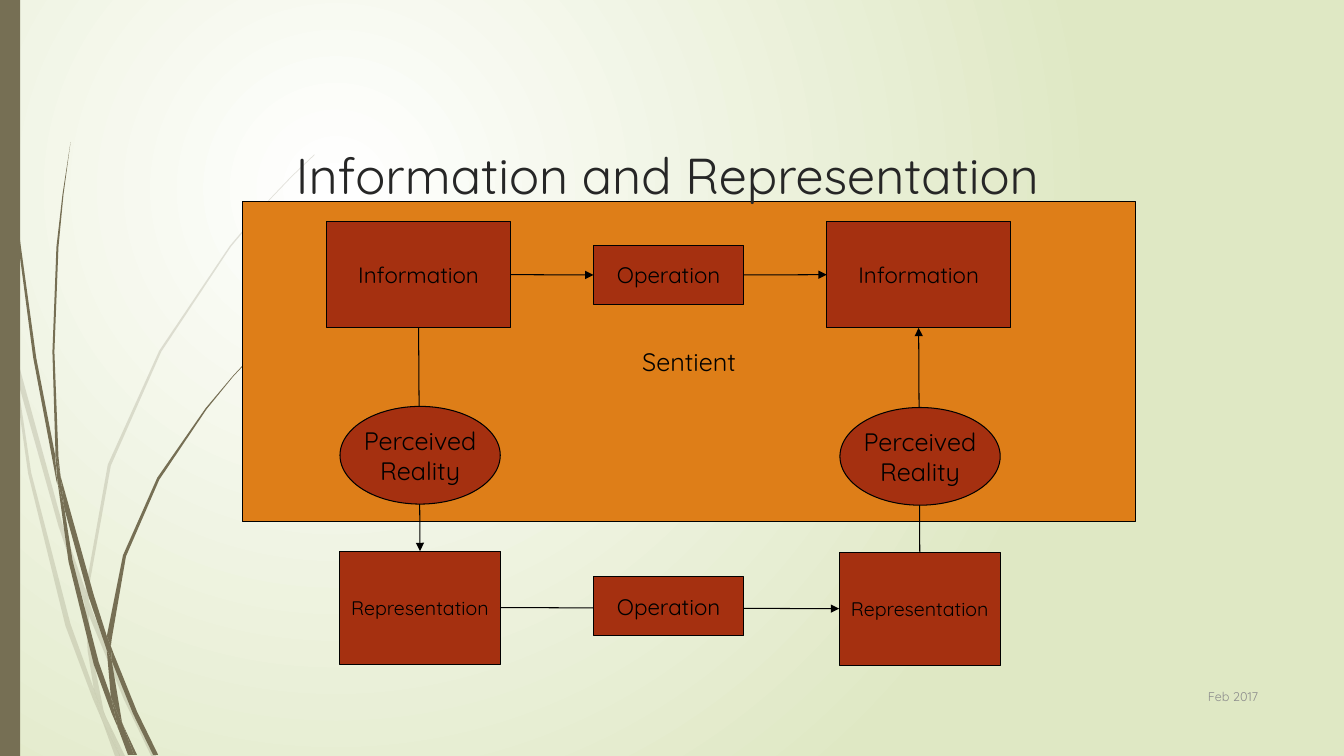
from lxml.etree import SubElement
from pptx import Presentation
from pptx.dml.color import RGBColor
from pptx.enum.shapes import MSO_CONNECTOR, MSO_SHAPE
from pptx.enum.text import MSO_ANCHOR, MSO_AUTO_SIZE, PP_ALIGN
from pptx.oxml.ns import qn
from pptx.util import Pt

COLORS = {"ink": "000000", "title": "262626", "date": "8C8C8C", "stem": "766F54",
          "panel": "DE7E18", "node": "A53010", "glow": "FFFFFF", "field": "DFE8C4"}
FONT = "Quicksand"
TITLE = "Information and Representation"
DATE = "Feb 2017"
SLIDE_W, SLIDE_H = 960, 540

# Kind of node: preset shape, width, height, text size
KINDS = {
    "panel": (MSO_SHAPE.RECTANGLE, 638.4, 228.6, 18),
    "information": (MSO_SHAPE.RECTANGLE, 131.4, 76, 16),
    "representation": (MSO_SHAPE.RECTANGLE, 115.2, 80.7, 14),
    "operation": (MSO_SHAPE.RECTANGLE, 107.3, 42.4, 16),
    "reality": (MSO_SHAPE.OVAL, 114.5, 69.8, 18),
}
# Key: kind, lines of text, centre x, centre y
PANEL = {"sentient": ("panel", ["Sentient"], 492.2, 258.3)}
CORNERS = {
    "rep_in": ("representation", ["Representation"], 300, 434),
    "info_in": ("information", ["Information"], 299, 196.2),
    "rep_out": ("representation", ["Representation"], 657, 434.8),
    "info_out": ("information", ["Information"], 656.2, 196.2),
}
MIDDLES = {
    "real_in": ("reality", ["Perceived", "Reality"], 300.1, 325.2),
    "real_out": ("reality", ["Perceived", "Reality"], 657.2, 326),
    "op_low": ("operation", ["Operation"], 477.6, 433.1),
    "op_high": ("operation", ["Operation"], 477.6, 196.4),
}
TOP, LEFT, BOTTOM, RIGHT = range(4)
LONG_ARROWS = [("rep_in", RIGHT, "rep_out", LEFT), ("info_in", BOTTOM, "rep_in", TOP),
               ("rep_out", TOP, "info_out", BOTTOM)]
SHORT_ARROWS = [("info_in", RIGHT, "op_high", LEFT), ("op_high", RIGHT, "info_out", LEFT)]

# Outlines of the grass blades, in steps of GRASS_UNIT points
GRASS_UNIT = 0.72
PALE_GRASS = [
    [(11, 350), (9, 322), (0, 282), (0, 299), (10, 344)],
    [(58, 522), (84, 599), (85, 586), (62, 520), (14, 345), (17, 376)],
    [(92, 607), (88, 596), (88, 610), (123, 694), (150, 750), (155, 750), (127, 692)],
    [(119, 750), (124, 750), (105, 711)],
    [(93, 683), (70, 619), (31, 469), (17, 376), (11, 350), (28, 470), (65, 621), (92, 693),
     (101, 714), (99, 707)],
    [(84, 599), (87, 646), (93, 683), (96, 692), (105, 711), (103, 706), (91, 646), (88, 610),
     (88, 608)],
    [(88, 584), (110, 462), (160, 349), (229, 245), (268, 198), (290, 175), (312, 154), (312, 153),
     (289, 175), (268, 197), (228, 244), (158, 348), (107, 461), (85, 584), (85, 586), (88, 596)],
    [(101, 714), (114, 750), (119, 750)],
    [(88, 608), (88, 610), (88, 596), (85, 586), (84, 599)],
    [(96, 692), (93, 683), (99, 707), (101, 714), (119, 750), (105, 711)],
]
DARK_GRASS = [
    [(7, 110), (17, 233), (33, 355), (56, 477), (57, 481), (55, 457), (55, 453), (36, 355),
     (19, 232), (8, 109), (5, 48), (4, 0), (3, 0), (4, 48)],
    [(88, 592), (106, 645), (106, 633), (106, 631), (93, 590), (60, 472), (64, 505)],
    [(113, 649), (110, 641), (111, 656), (132, 708), (152, 749), (157, 749), (136, 706)],
    [(110, 691), (98, 657), (72, 556), (64, 505), (57, 477), (68, 557), (93, 659), (111, 708),
     (117, 722), (116, 717)],
    [(60, 472), (58, 453), (54, 349), (58, 245), (63, 193), (70, 141), (62, 193), (56, 245),
     (52, 349), (55, 449)],
    [(133, 749), (136, 749), (122, 719)],
    [(57, 477), (64, 505), (60, 472), (55, 449), (55, 453)],
    [(111, 633), (125, 552), (158, 476), (205, 406), (231, 374), (245, 359), (261, 344), (260, 344),
     (245, 358), (231, 373), (204, 405), (156, 474), (122, 551), (106, 631), (110, 641)],
    [(117, 722), (127, 749), (131, 749)],
    [(106, 645), (110, 691), (116, 706), (122, 719), (121, 716), (111, 656), (109, 651)],
    [(106, 645), (109, 651), (111, 656), (110, 641), (106, 631), (106, 633)],
    [(116, 706), (110, 691), (116, 717), (117, 722), (130, 749), (133, 749), (122, 719)],
]


def color(name):
    return RGBColor.from_string(COLORS[name])


def paint(shape, fill, line=None):
    shape.shadow.inherit = False
    shape.fill.solid()
    shape.fill.fore_color.rgb = color(fill)
    if line:
        shape.line.color.rgb = color(line)
        shape.line.width = Pt(0.75)
    else:
        shape.line.fill.background()


def write(frame, lines, size, ink, align, anchor, wrap=True):
    frame.auto_size = MSO_AUTO_SIZE.NONE
    frame.word_wrap = wrap
    frame.vertical_anchor = anchor
    for index, line in enumerate(lines):
        paragraph = frame.add_paragraph() if index else frame.paragraphs[0]
        paragraph.alignment = align
        run = paragraph.add_run()
        run.text = line
        run.font.name, run.font.size = FONT, Pt(size)
        run.font.color.rgb = color(ink)


def add_blade(shapes, outline, opacity=None):
    builder = shapes.build_freeform(*outline[0], scale=Pt(GRASS_UNIT))
    builder.add_line_segments(outline[1:], close=True)
    blade = builder.convert_to_shape()
    paint(blade, "stem")
    if opacity:
        fill_color = blade._element.spPr.find(qn("a:solidFill"))[0]
        SubElement(fill_color, qn("a:alpha"), val=str(opacity * 1000))


def add_nodes(shapes, nodes):
    built = {}
    for key, (kind, lines, x, y) in nodes.items():
        preset, width, height, size = KINDS[kind]
        node = shapes.add_shape(preset, Pt(x - width / 2), Pt(y - height / 2), Pt(width), Pt(height))
        paint(node, "panel" if kind == "panel" else "node", "ink")
        write(node.text_frame, lines, size, "ink", PP_ALIGN.CENTER, MSO_ANCHOR.MIDDLE, wrap=False)
        built[key] = node
    return built


def add_arrows(shapes, arrows, nodes):
    for start, start_side, end, end_side in arrows:
        arrow = shapes.add_connector(MSO_CONNECTOR.STRAIGHT, 0, 0, 0, 0)
        arrow.begin_connect(nodes[start], start_side)
        arrow.end_connect(nodes[end], end_side)
        arrow.line.color.rgb = color("ink")
        arrow.line.width = Pt(0.75)
        SubElement(arrow.line._get_or_add_ln(), qn("a:tailEnd"), type="triangle")
        SubElement(arrow._element.spPr, qn("a:effectLst"))


def fill_background(slide):
    """Round gradient centred a quarter of the way in from the top left."""
    fill = slide.background.fill
    fill.gradient()
    for stop, name in zip(fill.gradient_stops, ("glow", "field")):
        stop.color.rgb = color(name)
    gradient = slide.background._cSld.find(".//" + qn("a:gradFill"))
    gradient.remove(gradient.find(qn("a:lin")))
    circle = SubElement(gradient, qn("a:path"), path="circle")
    SubElement(circle, qn("a:fillToRect"), l="50000", t="50000", r="100000", b="100000")


def main():
    deck = Presentation()
    deck.slide_width, deck.slide_height = Pt(SLIDE_W), Pt(SLIDE_H)
    slide = deck.slides.add_slide(deck.slide_layouts[5])
    shapes = slide.shapes
    fill_background(slide)

    for outline in PALE_GRASS:
        add_blade(shapes, outline, opacity=20)
    for outline in DARK_GRASS:
        add_blade(shapes, outline)
    side_bar = shapes.add_shape(MSO_SHAPE.RECTANGLE, 0, 0, Pt(14.4), Pt(SLIDE_H))
    paint(side_bar, "stem")

    date = shapes.add_textbox(Pt(815.8), Pt(482.4), Pt(90), Pt(29.5))
    write(date.text_frame, [DATE], 9, "date", PP_ALIGN.RIGHT, MSO_ANCHOR.MIDDLE)

    add_nodes(shapes, PANEL)
    title = shapes.title
    title.left, title.top, title.width, title.height = Pt(204.2), Pt(49), Pt(702), Pt(100.8)
    write(title.text_frame, [TITLE], 36, "title", PP_ALIGN.LEFT, MSO_ANCHOR.BOTTOM)
    shapes._spTree.append(title._element)  # the title lies over the panel

    nodes = add_nodes(shapes, CORNERS)
    add_arrows(shapes, LONG_ARROWS, nodes)
    nodes.update(add_nodes(shapes, MIDDLES))
    add_arrows(shapes, SHORT_ARROWS, nodes)
    deck.save("out.pptx")


if __name__ == "__main__":
    main()
